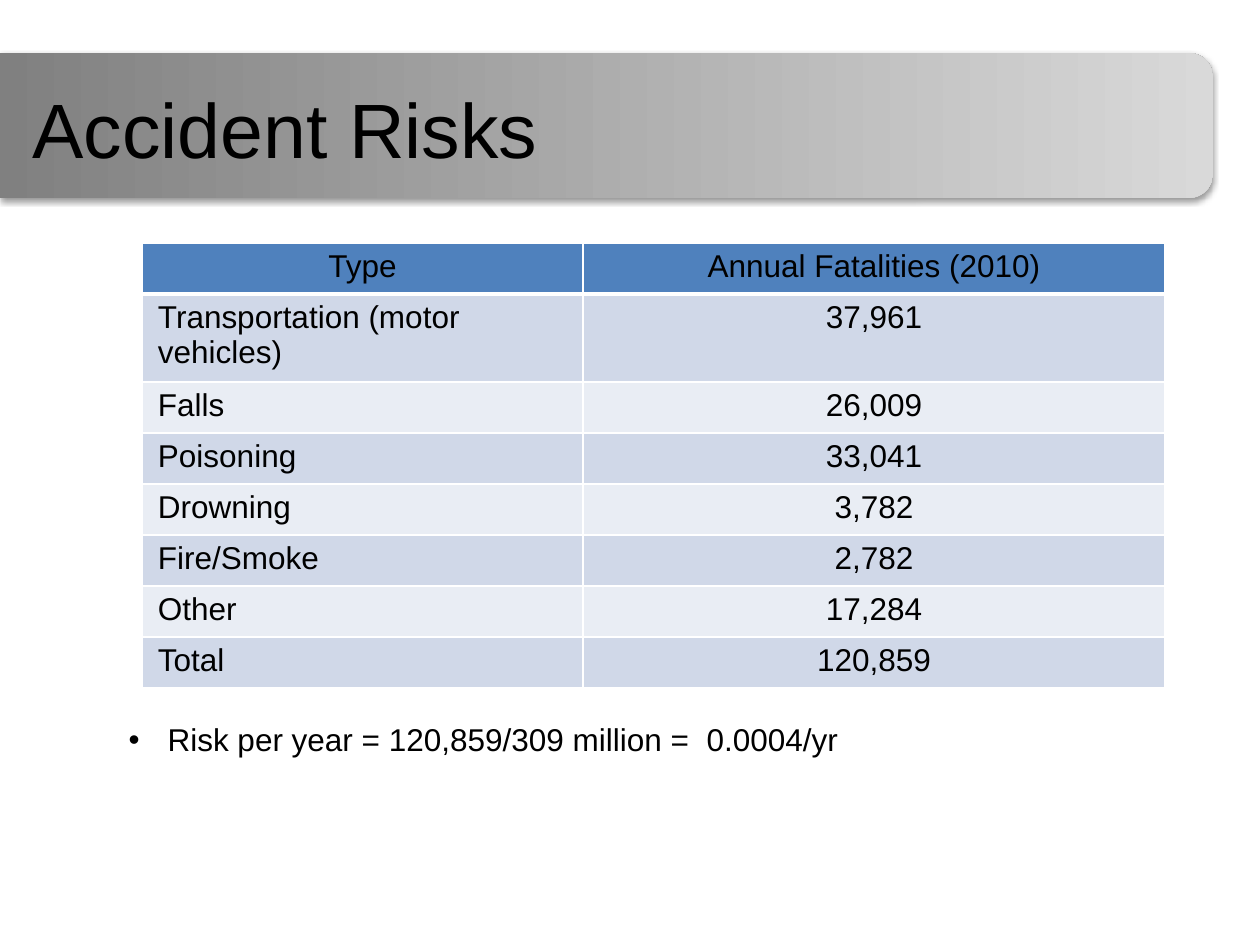
from typing import NamedTuple

from lxml import etree
from pptx import Presentation
from pptx.dml.color import RGBColor
from pptx.enum.shapes import MSO_SHAPE
from pptx.enum.text import MSO_ANCHOR, MSO_AUTO_SIZE, PP_ALIGN
from pptx.oxml.ns import qn
from pptx.util import Pt

LEFT, CENTER = PP_ALIGN.LEFT, PP_ALIGN.CENTER
TOP, MIDDLE = MSO_ANCHOR.TOP, MSO_ANCHOR.MIDDLE
GROW, FIXED = MSO_AUTO_SIZE.SHAPE_TO_FIT_TEXT, MSO_AUTO_SIZE.NONE
BANNER_SHAPE = MSO_SHAPE.ROUND_2_SAME_RECTANGLE
EMU_PER_PX = 914400 / 126
FONT = "Arial"
COLORS = {
    "text": "000000",
    "white": "FFFFFF",
    "header": "4F81BD",
    "odd": "D0D8E8",
    "even": "E9EDF4",
    "banner_dark": "808080",
    "banner_light": "D9D9D9",
}


class Box(NamedTuple):
    left: int
    top: int
    width: int
    height: int


class Risk(NamedTuple):
    kind: str
    fatalities: str


BANNER = Box(534, -481, 145, 1213)
TITLE = Box(20, 62, 931, 132)
TABLE = Box(142, 243, 1023, 445)
BODY = Box(116, 714, 872, 50)
COLUMN_WIDTHS = (441, 582)
ROW_HEIGHT, WRAPPED_ROW_HEIGHT = 51, 88
RISKS = (
    Risk("Type", "Annual Fatalities (2010)"),
    Risk("Transportation (motor vehicles)", "37,961"),
    Risk("Falls", "26,009"),
    Risk("Poisoning", "33,041"),
    Risk("Drowning", "3,782"),
    Risk("Fire/Smoke", "2,782"),
    Risk("Other", "17,284"),
    Risk("Total", "120,859"),
)


def px(length: int) -> int:
    return round(length * EMU_PER_PX)


def color(name: str) -> RGBColor:
    return RGBColor.from_string(COLORS[name])


def place(shape, box: Box) -> None:
    shape.left, shape.top, shape.width, shape.height = map(px, box)


def add_text(paragraph, text: str, size: int, alignment) -> None:
    paragraph.alignment = alignment
    run = paragraph.add_run()
    run.text = text
    run.font.name = FONT
    run.font.size = Pt(size)
    run.font.color.rgb = color("text")


def add_element(parent, tag: str, **attributes: str):
    return etree.SubElement(parent, qn(tag), attributes)


def draw_banner(slide) -> None:
    banner = slide.shapes.add_shape(BANNER_SHAPE, *map(px, BANNER))
    banner.rotation = 90
    banner.line.fill.background()
    banner.fill.gradient()
    banner.fill.gradient_angle = 0
    for stop, name in zip(banner.fill.gradient_stops, ("banner_dark", "banner_light")):
        stop.color.rgb = color(name)
    properties = banner._element.spPr
    properties.find(qn("a:gradFill")).set("rotWithShape", "0")
    effects = add_element(properties, "a:effectLst")
    shadow = add_element(
        effects, "a:outerShdw", blurRad=str(Pt(3.1)), dist=str(Pt(1.6)),
        dir="5400000", rotWithShape="0",
    )
    shadow_color = add_element(shadow, "a:srgbClr", val=COLORS["text"])
    add_element(shadow_color, "a:alpha", val="38000")
    slide.shapes._spTree.insert(2, banner._element)


def fill_placeholder(shape, box: Box, text: str, size: int, anchor, auto_size) -> None:
    place(shape, box)
    frame = shape.text_frame
    frame.word_wrap = True
    frame.auto_size = auto_size
    frame.vertical_anchor = anchor
    add_text(frame.paragraphs[0], text, size, LEFT)
    frame.paragraphs[0].space_before = Pt(0)


def set_bullet(paragraph, indent: int) -> None:
    properties = paragraph._p.get_or_add_pPr()
    properties.set("marL", str(px(indent)))
    properties.set("indent", str(-px(indent)))
    add_element(properties, "a:buFont", typeface=FONT)
    add_element(properties, "a:buChar", char="•")


def set_borders(cell, bottom_width: int) -> None:
    properties = cell._tc.get_or_add_tcPr()
    widths = {"a:lnL": 1, "a:lnR": 1, "a:lnT": 1, "a:lnB": bottom_width}
    for tag, width in widths.items():
        line = add_element(properties, tag, w=str(Pt(width)))
        fill = add_element(line, "a:solidFill")
        add_element(fill, "a:srgbClr", val=COLORS["white"])


def fill_cell(cell, text: str, fill: str, alignment, bottom_width: int) -> None:
    cell.margin_left = cell.margin_right = px(16)
    cell.margin_top = cell.margin_bottom = px(6)
    add_text(cell.text_frame.paragraphs[0], text, 18, alignment)
    set_borders(cell, bottom_width)
    cell.fill.solid()
    cell.fill.fore_color.rgb = color(fill)


def draw_table(slide) -> None:
    frame = slide.shapes.add_table(len(RISKS), len(COLUMN_WIDTHS), *map(px, TABLE))
    table = frame.table
    for column, width in zip(table.columns, COLUMN_WIDTHS):
        column.width = px(width)
    for index, risk in enumerate(RISKS):
        is_header = index == 0
        table.rows[index].height = px(WRAPPED_ROW_HEIGHT if index == 1 else ROW_HEIGHT)
        fill = "header" if is_header else ("even", "odd")[index % 2]
        bottom_width = 3 if is_header else 1
        kind_alignment = CENTER if is_header else LEFT
        fill_cell(table.cell(index, 0), risk.kind, fill, kind_alignment, bottom_width)
        fill_cell(table.cell(index, 1), risk.fatalities, fill, CENTER, bottom_width)


def main() -> None:
    presentation = Presentation()
    presentation.slide_width, presentation.slide_height = px(1260), px(945)
    slide = presentation.slides.add_slide(presentation.slide_layouts[1])
    draw_banner(slide)
    draw_table(slide)
    fill_placeholder(slide.shapes.title, TITLE, "Accident Risks", 44, MIDDLE, FIXED)
    body = slide.placeholders[1]
    set_bullet(body.text_frame.paragraphs[0], 39)
    fill_placeholder(
        body, BODY, "Risk per year = 120,859/309 million =  0.0004/yr", 18, TOP, GROW
    )
    presentation.save("out.pptx")


if __name__ == "__main__":
    main()
